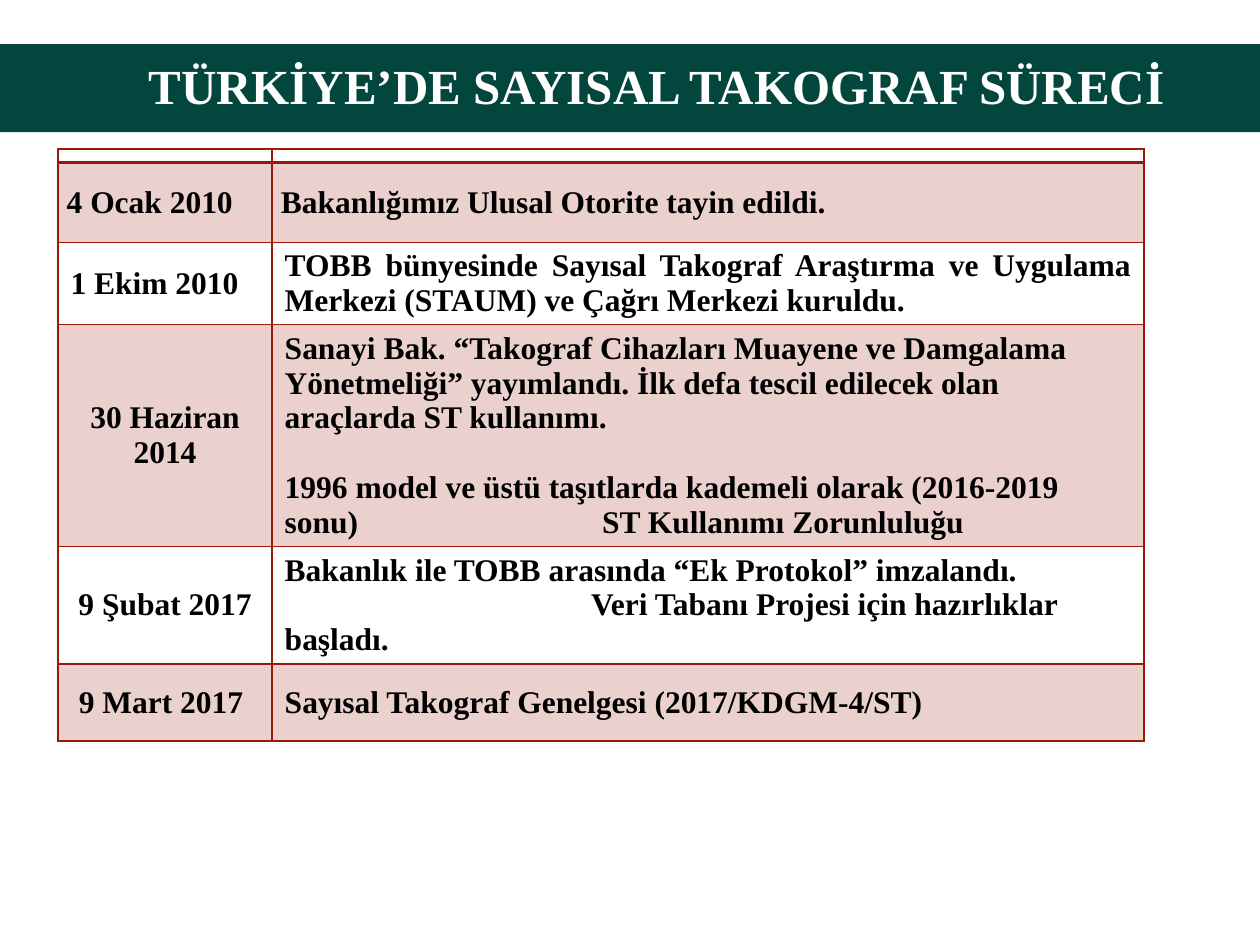
from pptx import Presentation
from pptx.dml.color import RGBColor
from pptx.enum.shapes import MSO_SHAPE as SHAPE
from pptx.enum.text import MSO_ANCHOR as ANCHOR, PP_ALIGN as ALIGN
from pptx.oxml.ns import qn
from pptx.util import Pt
from lxml.etree import SubElement

RED = "9A1A0A"


def color(hex_code):
    return RGBColor.from_string(hex_code)


def add_run(paragraph, text, size, hex_code):
    run = paragraph.add_run()
    run.text = text
    run.font.name = "Times New Roman"
    run.font.size = Pt(size)
    run.font.bold = True
    run.font.color.rgb = color(hex_code)


prs = Presentation()
prs.slide_width, prs.slide_height = Pt(720), Pt(540)
slide = prs.slides.add_slide(prs.slide_layouts[6])

# Title band
band = slide.shapes.add_shape(SHAPE.RECTANGLE, 0, Pt(25.2), Pt(720), Pt(50.4))
band.shadow.inherit = False
band.fill.solid()
band.fill.fore_color.rgb = color("02463E")
band.line.fill.background()
title = band.text_frame
title.word_wrap = True
title.vertical_anchor = ANCHOR.MIDDLE
title.margin_left, title.margin_bottom = Pt(37.2), Pt(7.6)
heading = title.paragraphs[0]
heading.alignment = ALIGN.CENTER
add_run(heading, "TÜRKİYE’DE SAYISAL TAKOGRAF SÜRECİ", 28, "FFFFFF")

# Timeline: date, date alignment, events, event alignment, side margin, tab stop
L, C, J = ALIGN.LEFT, ALIGN.CENTER, ALIGN.JUSTIFY
milestones = [
    ("4 Ocak 2010 ", J, ["Bakanlığımız Ulusal Otorite tayin edildi."], J, 5, 0),
    ("1 Ekim 2010", J,
     ["TOBB bünyesinde Sayısal Takograf Araştırma ve Uygulama Merkezi "
      "(STAUM) ve Çağrı Merkezi kuruldu."], J, 7.2, 0),
    ("30 Haziran 2014", C,
     ["Sanayi Bak. “Takograf Cihazları Muayene ve Damgalama Yönetmeliği” "
      "yayımlandı. İlk defa tescil edilecek olan araçlarda ST kullanımı.",
      "1996 model ve üstü taşıtlarda kademeli olarak (2016-2019 sonu)"
      "\tST Kullanımı Zorunluluğu"], L, 7.2, 181.4),
    ("9 Şubat 2017", C,
     ["Bakanlık ile TOBB arasında “Ek Protokol” imzalandı.",
      "\tVeri Tabanı Projesi için hazırlıklar başladı."], L, 7.2, 175),
    ("9 Mart 2017 ", C, ["Sayısal Takograf Genelgesi (2017/KDGM-4/ST)"], L, 7.2, 0),
]
row_heights = [8, 45.4, 47, 126.7, 67, 44]
column_widths = [122.4, 498.2]
timeline = slide.shapes.add_table(
    len(row_heights), 2, Pt(33.1), Pt(85.1),
    Pt(sum(column_widths)), Pt(sum(row_heights))).table
for row, height in zip(timeline.rows, row_heights):
    row.height = Pt(height)
for column, width in zip(timeline.columns, column_widths):
    column.width = Pt(width)

# Borders and alternating tint
for r, row in enumerate(timeline.rows):
    for cell in row.cells:
        cell.vertical_anchor = ANCHOR.MIDDLE
        props = cell._tc.get_or_add_tcPr()
        for side in ("lnL", "lnR", "lnT", "lnB"):
            thick = (r, side) in ((0, "lnB"), (1, "lnT"))
            edge = SubElement(props, qn(f"a:{side}"), w=str(Pt(2 if thick else 1)))
            SubElement(SubElement(edge, qn("a:solidFill")), qn("a:srgbClr"), val=RED)
        if r % 2:
            cell.fill.solid()
            cell.fill.fore_color.rgb = color(RED)
            tint = props.find(qn("a:solidFill")).find(qn("a:srgbClr"))
            SubElement(tint, qn("a:alpha"), val="20000")
        else:
            cell.fill.background()

# Thin empty header row
for cell in timeline.rows[0].cells:
    cell.margin_top = cell.margin_bottom = 0
    SubElement(cell.text_frame.paragraphs[0]._p, qn("a:endParaRPr"), sz="200")

# Dates and events
for r, (date, date_align, events, event_align, margin, tab) in enumerate(milestones, 1):
    for c, (lines, align) in enumerate([([date], date_align), (events, event_align)]):
        cell = timeline.cell(r, c)
        cell.margin_left = cell.margin_right = Pt(margin)
        frame = cell.text_frame
        for i, line in enumerate(lines):
            paragraph = frame.add_paragraph() if i else frame.paragraphs[0]
            paragraph.alignment = align
            if i and not line.startswith("\t"):
                paragraph.space_before = Pt(19.9)
            if "\t" in line:
                stops = SubElement(paragraph._p.get_or_add_pPr(), qn("a:tabLst"))
                SubElement(stops, qn("a:tab"), pos=str(Pt(tab)), algn="l")
            add_run(paragraph, line, 18, "000000")

prs.save("out.pptx")
